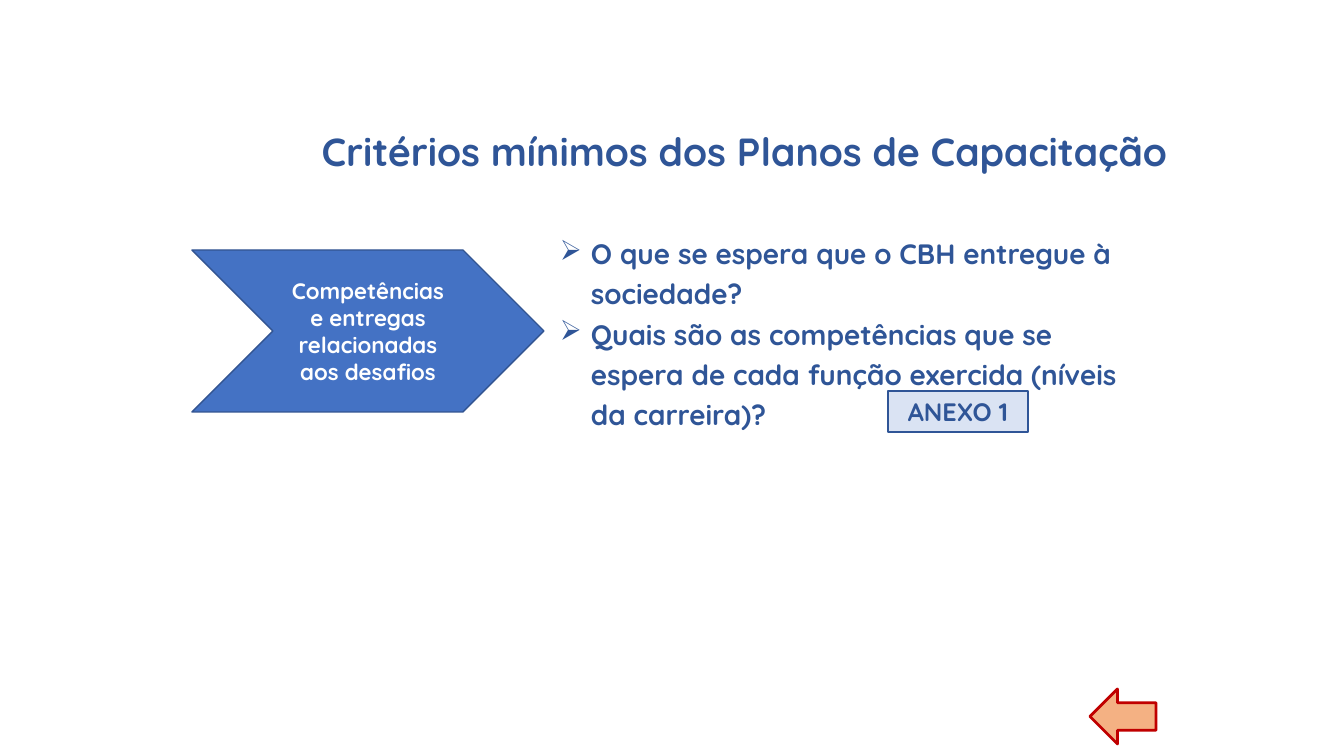
"""Build the slide on minimum criteria for training plans."""
from pptx import Presentation
from pptx.dml.color import RGBColor
from pptx.enum.shapes import MSO_SHAPE
from pptx.enum.text import MSO_ANCHOR, MSO_AUTO_SIZE, PP_ALIGN
from pptx.oxml.ns import qn
from pptx.util import Emu, Pt
from lxml import etree

CHEVRON, RECT, ARROW = MSO_SHAPE.CHEVRON, MSO_SHAPE.RECTANGLE, MSO_SHAPE.LEFT_ARROW
TOP, MIDDLE = MSO_ANCHOR.TOP, MSO_ANCHOR.MIDDLE
LEFT, CENTER, RIGHT = PP_ALIGN.LEFT, PP_ALIGN.CENTER, PP_ALIGN.RIGHT
FIXED = MSO_AUTO_SIZE.NONE
FONT = "Quicksand"
COLORS = {
    "navy": "2F5597", "blue": "4472C4", "edge": "325491", "white": "FFFFFF",
    "pale": "DAE3F3", "peach": "F4B183", "red": "C00000",
}


def px(n):
    return Emu(round(n * 914400 / 100.8))


def write(shape, *lines, size, color="navy", align=LEFT, anchor=TOP, space=1.0, bullet=None):
    frame = shape.text_frame
    frame.word_wrap = True
    frame.auto_size = FIXED
    frame.vertical_anchor = anchor
    for i, line in enumerate(lines):
        para = frame.add_paragraph() if i else frame.paragraphs[0]
        if bullet:
            props = para._p.get_or_add_pPr()
            props.set("marL", str(px(31)))
            props.set("indent", str(px(-31)))
            etree.SubElement(props, qn("a:buChar")).set("char", bullet)
        para.alignment = align
        para.line_spacing = space
        run = para.add_run()
        run.text = line
        run.font.name = FONT
        run.font.size = Pt(size)
        run.font.bold = True
        run.font.color.rgb = RGBColor.from_string(COLORS[color])


deck = Presentation()
deck.slide_width, deck.slide_height = px(1344), px(756)
slide = deck.slides.add_slide(deck.slide_layouts[5])

title = slide.shapes.title
title.left, title.top, title.width, title.height = map(px, (192, 122, 985, 57))
write(title, "Critérios mínimos dos Planos de Capacitação", size=28, align=RIGHT)

parts = {}
for name, kind, box, fill, edge, width in (
    ("theme", CHEVRON, (192, 250, 352, 162), "blue", "edge", 1),
    ("annex", RECT, (888, 391, 140, 41), "pale", "navy", 2),
    ("back", ARROW, (1090, 689, 66, 55), "peach", "red", 2),
):
    part = slide.shapes.add_shape(kind, *map(px, box))
    part.shadow.inherit = False
    part.fill.solid()
    part.fill.fore_color.rgb = RGBColor.from_string(COLORS[fill])
    part.line.color.rgb = RGBColor.from_string(COLORS[edge])
    part.line.width = Pt(width)
    parts[name] = part
    if name == "theme":
        goals = slide.shapes.add_textbox(*map(px, (550, 225, 583, 214)))

write(parts["theme"], "Competências e entregas relacionadas aos desafios",
      size=16, color="white", align=CENTER, anchor=MIDDLE)
write(goals, "O que se espera que o CBH entregue à sociedade?",
      "Quais são as competências que se espera de cada função exercida (níveis da carreira)?",
      size=20, space=1.2, bullet="➢")
write(parts["annex"], "ANEXO 1", size=18, align=CENTER)

deck.save("out.pptx")
